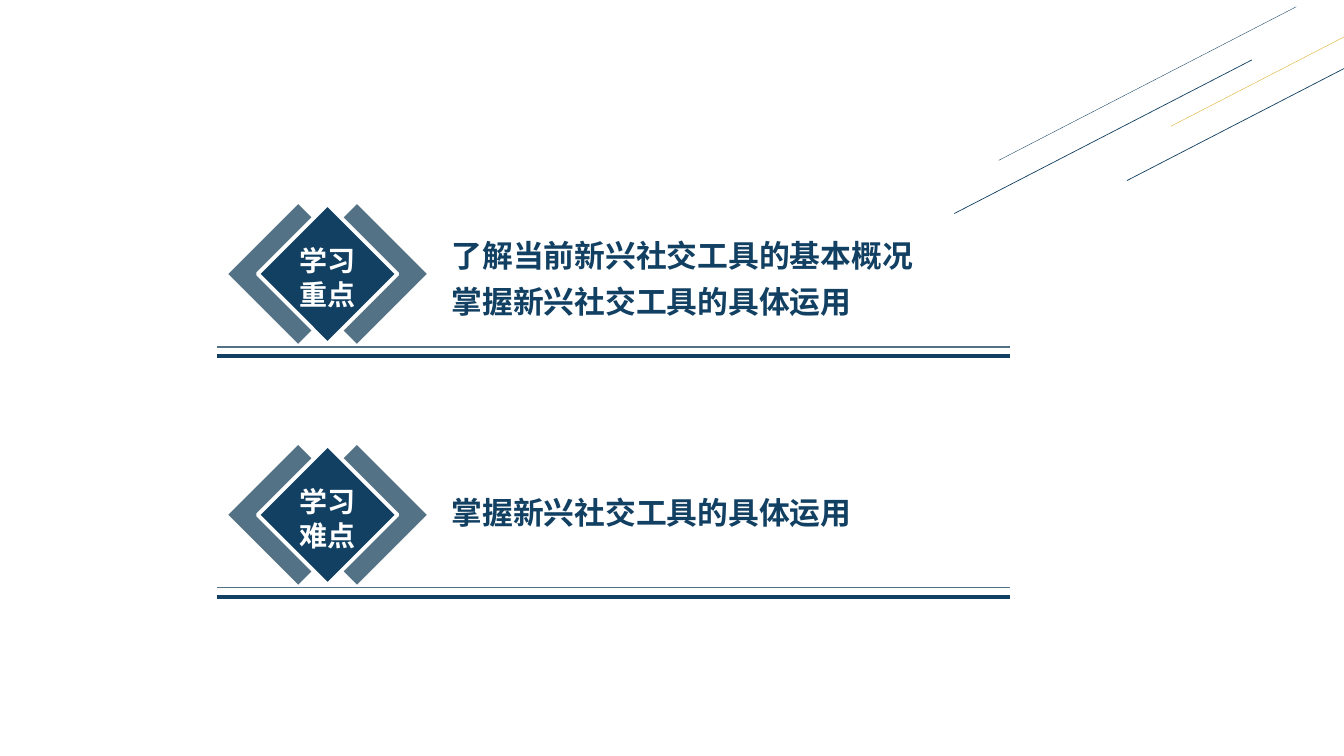
from dataclasses import dataclass

from lxml import etree
from pptx import Presentation
from pptx.dml.color import RGBColor
from pptx.enum.shapes import MSO_CONNECTOR, MSO_SHAPE
from pptx.enum.text import MSO_ANCHOR, MSO_AUTO_SIZE, PP_ALIGN
from pptx.oxml.ns import qn
from pptx.util import Cm, Pt

STRAIGHT = MSO_CONNECTOR.STRAIGHT
RECTANGLE = MSO_SHAPE.RECTANGLE
TOP = MSO_ANCHOR.TOP
GROW = MSO_AUTO_SIZE.SHAPE_TO_FIT_TEXT
LEFT = PP_ALIGN.LEFT
CENTER = PP_ALIGN.CENTER
TWO_CONTENT_LAYOUT = 3


@dataclass(frozen=True)
class Theme:
    navy: RGBColor = RGBColor(0x12, 0x40, 0x62)
    slate: RGBColor = RGBColor(0x53, 0x72, 0x85)
    gold: RGBColor = RGBColor(0xDC, 0xAA, 0x1F)
    white: RGBColor = RGBColor(0xFF, 0xFF, 0xFF)
    font: str = "Noto Sans CJK SC"
    label_size: int = 20
    goal_size: int = 22


@dataclass(frozen=True)
class Streak:
    left: float
    bottom: float
    color: RGBColor
    weight: float


@dataclass(frozen=True)
class Section:
    top: float
    label: str
    goals: str
    goals_top: float
    goals_width: float
    goals_height: float
    placeholder: int


THEME = Theme()
STREAK_RUN, STREAK_RISE = 7.5, 3.87
RULE_LEFT, RULE_RIGHT = 5.46, 25.45
THIN_RULE_DROP, THICK_RULE_DROP = 3.08, 3.31
SQUARE_SIDE = 2.49
SQUARE_CENTER_LEFT, SQUARE_SHIFT = 7.01, 0.74
GOALS_LEFT = 11.13

STREAKS = [
    Streak(24.05, 5.38, THEME.navy, 0.5),
    Streak(25.17, 4.04, THEME.navy, 0.25),
    Streak(28.4, 4.55, THEME.navy, 0.5),
    Streak(29.51, 3.18, THEME.gold, 0.25),
]
SECTIONS = [
    Section(5.66, "学习\n重点", "了解当前新兴社交工具的基本概况\n掌握新兴社交工具的具体运用",
            5.61, 12.14, 2.59, 1),
    Section(11.73, "学习\n难点", "掌握新兴社交工具的具体运用",
            12.09, 10.59, 1.42, 2),
]


def add_line(page, start: tuple[float, float], end: tuple[float, float],
             color: RGBColor, weight: float) -> None:
    line = page.shapes.add_connector(
        STRAIGHT, Cm(start[0]), Cm(start[1]), Cm(end[0]), Cm(end[1]))
    line.line.color.rgb = color
    line.line.width = Pt(weight)
    etree.SubElement(line.element.spPr, qn("a:effectLst"))


def add_square(shapes, left: float, top: float, color: RGBColor):
    square = shapes.add_shape(
        RECTANGLE, Cm(left), Cm(top), Cm(SQUARE_SIDE), Cm(SQUARE_SIDE))
    square.rotation = 45
    square.shadow.inherit = False
    square.fill.solid()
    square.fill.fore_color.rgb = color
    square.line.fill.background()
    return square


def fill_text(box, text: str, size: int, color: RGBColor,
              alignment: PP_ALIGN, spacing: float) -> None:
    frame = box.text_frame
    frame.text = text
    frame.word_wrap = False
    frame.auto_size = GROW
    frame.vertical_anchor = TOP
    for para in frame.paragraphs:
        para.alignment = alignment
        para.line_spacing = spacing
        para.space_before = Pt(0)
        for span in para.runs:
            span.font.name = THEME.font
            span.font.size = Pt(size)
            span.font.bold = True
            span.font.color.rgb = color
            east_asian = etree.SubElement(span.font._element, qn("a:ea"))
            east_asian.set("typeface", THEME.font)


def add_badge(page, section: Section) -> None:
    for shift in (SQUARE_SHIFT, -SQUARE_SHIFT):
        add_square(page.shapes, SQUARE_CENTER_LEFT + shift, section.top, THEME.slate)
    badge = page.shapes.add_group_shape()
    diamond = add_square(badge.shapes, SQUARE_CENTER_LEFT, section.top, THEME.navy)
    diamond.line.color.rgb = THEME.white
    diamond.line.width = Pt(2.75)
    label = badge.shapes.add_textbox(
        Cm(7.29), Cm(section.top + 0.36), Cm(1.93), Cm(1.96))
    fill_text(label, section.label, THEME.label_size, THEME.white, CENTER, 1.0)


def place_goals(page, section: Section) -> None:
    box = page.placeholders[section.placeholder]
    box.left, box.top = Cm(GOALS_LEFT), Cm(section.goals_top)
    box.width, box.height = Cm(section.goals_width), Cm(section.goals_height)
    fill_text(box, section.goals, THEME.goal_size, THEME.navy, LEFT, 1.25)
    for para in box.text_frame.paragraphs:
        properties = para._p.get_or_add_pPr()
        properties.set("marL", "0")
        properties.set("indent", "0")
        etree.SubElement(properties, qn("a:buNone"))


def add_section(page, section: Section) -> None:
    thin = section.top + THIN_RULE_DROP
    thick = section.top + THICK_RULE_DROP
    add_line(page, (RULE_RIGHT, thin), (RULE_LEFT, thin), THEME.slate, 1)
    add_badge(page, section)
    add_line(page, (RULE_RIGHT, thick), (RULE_LEFT, thick), THEME.navy, 3)
    place_goals(page, section)


def main() -> None:
    deck = Presentation()
    deck.slide_width, deck.slide_height = Cm(33.87), Cm(19.05)
    page = deck.slides.add_slide(deck.slide_layouts[TWO_CONTENT_LAYOUT])
    title = page.shapes.title.element
    title.getparent().remove(title)
    for streak in STREAKS:
        end = (streak.left + STREAK_RUN, streak.bottom - STREAK_RISE)
        add_line(page, (streak.left, streak.bottom), end, streak.color, streak.weight)
    for section in SECTIONS:
        add_section(page, section)
    deck.save("out.pptx")


if __name__ == "__main__":
    main()
